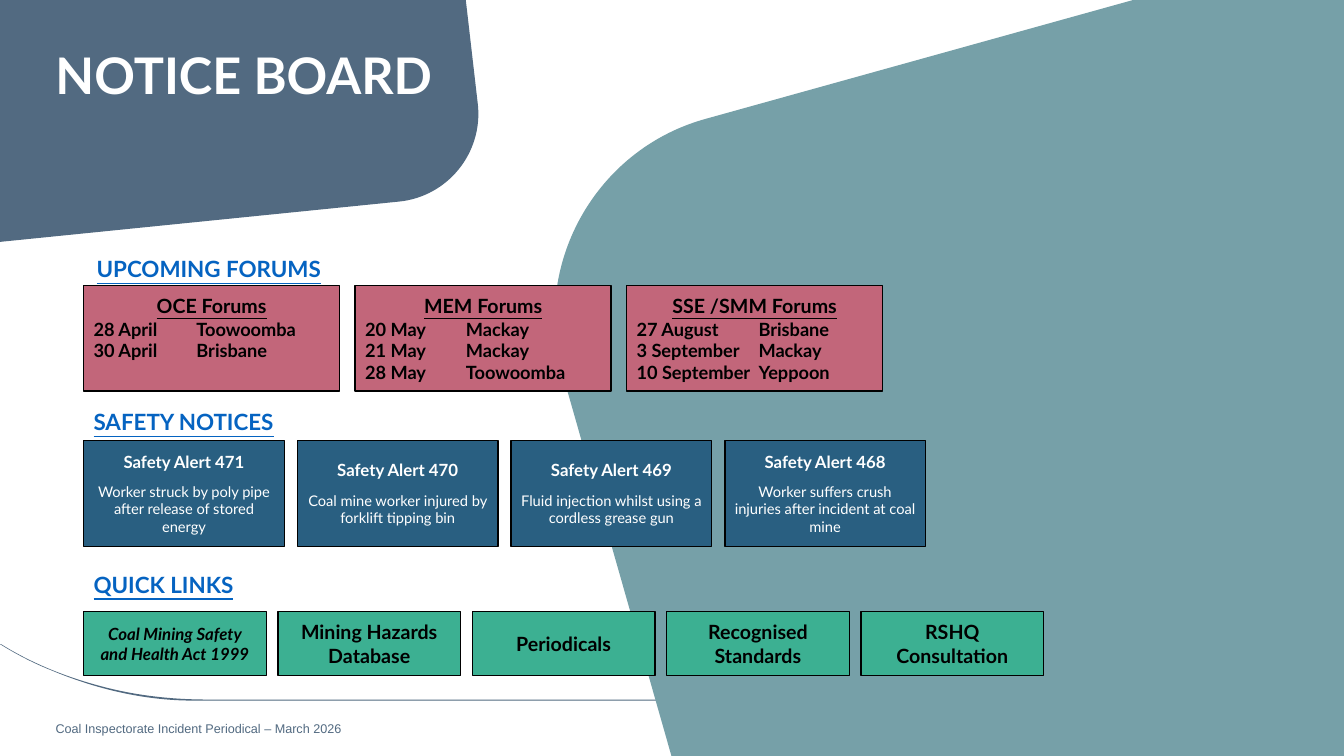
from lxml import etree
from pptx import Presentation
from pptx.dml.color import RGBColor
from pptx.enum.shapes import MSO_SHAPE
from pptx.enum.text import MSO_ANCHOR, PP_ALIGN
from pptx.oxml.ns import qn
from pptx.util import Inches, Pt

WIDE, HIGH = Inches(13.33), Inches(7.5)
LEFT = 6.23

SLATE = RGBColor(0x52, 0x6A, 0x81)
TEAL = RGBColor(0x76, 0xA0, 0xA8)
ROSE = RGBColor(0xC2, 0x66, 0x7A)
NAVY = RGBColor(0x29, 0x5F, 0x81)
GREEN = RGBColor(0x3C, 0xB0, 0x92)
BLUE = RGBColor(0x05, 0x63, 0xC1)
BLACK = RGBColor(0, 0, 0)
WHITE = RGBColor(255, 255, 255)

RECT = MSO_SHAPE.RECTANGLE
BUTTON = MSO_SHAPE.ACTION_BUTTON_CUSTOM
TOP, MIDDLE = MSO_ANCHOR.TOP, MSO_ANCHOR.MIDDLE
START, CENTER = PP_ALIGN.LEFT, PP_ALIGN.CENTER

SWOOSH = [
    (0, 85.2), (0.08, 85.2),
    (2.25, 87.6, 4.73, 89.47, 7.58, 90.8),
    (10.13, 92, 12.75, 92.53, 15.45, 92.53),
    (100, 92.53), (100, 92.67), (14.4, 92.67),
    (10.65, 92.67, 7.05, 91.07, 3.83, 88.67),
    (2.48, 87.73, 1.2, 86.53, 0, 85.2),
]
CORNER = [
    (0, 0), (34.66, 0), (35.56, 13.87),
    (35.93, 20.27, 33.31, 26, 29.71, 26.67), (0, 32),
]
PANEL = [
    (84.32, 0), (100, 0), (100, 100), (49.96, 100), (41.86, 49.47),
    (41.46, 46.99, 41.27, 44.48, 41.27, 42.01),
    (41.27, 30.07, 45.73, 19.05, 52.51, 15.73),
]
FORUMS = [
    ("OCE Forums", 1.02, ["28 April\tToowoomba", "30 April\tBrisbane"]),
    ("MEM Forums", 1, ["20 May\tMackay", "21 May\tMackay", "28 May\tToowoomba"]),
    ("SSE /SMM Forums", 1.21,
     ["27 August\tBrisbane", "3 September\tMackay", "10 September\tYeppoon"]),
]
ALERTS = [
    ("Safety Alert 471", "Worker struck by poly pipe after release of stored energy"),
    ("Safety Alert 470", "Coal mine worker injured by forklift tipping bin"),
    ("Safety Alert 469", "Fluid injection whilst using a cordless grease gun"),
    ("Safety Alert 468", "Worker suffers crush injuries after incident at coal mine"),
]
LINKS = [
    (BUTTON, "Coal Mining Safety and Health Act 1999", 12, True),
    (RECT, "Mining Hazards Database", 14, False),
    (BUTTON, "Periodicals", 14, False),
    (BUTTON, "Recognised Standards", 14, False),
    (BUTTON, "RSHQ Consultation", 14, False),
]


def place(*shares):
    return [round(share * (HIGH if i % 2 else WIDE) / 100)
            for i, share in enumerate(shares)]


def outline(slide, marks, color):
    marks = [place(*mark) for mark in marks]
    ends = [mark[-2:] for mark in marks]
    maker = slide.shapes.build_freeform(*ends[0])
    maker.add_line_segments(ends[1:], close=True)
    shape = maker.convert_to_shape()
    lines = list(shape._element.iter(qn("a:lnTo")))
    for line, mark in zip(lines, marks[1:]):
        if len(mark) == 6:
            curve = etree.Element(qn("a:cubicBezTo"))
            for x, y in zip(mark[::2], mark[1::2]):
                etree.SubElement(curve, qn("a:pt"), x=str(x - shape.left), y=str(y - shape.top))
            line.getparent().replace(line, curve)
    shape.shadow.inherit = False
    shape.fill.solid()
    shape.fill.fore_color.rgb = color
    shape.line.fill.background()


def write(frame, text, size, color, bold=True, align=START, under=None, tab=None, face="Lato"):
    para = frame.paragraphs[0]
    if para.runs:
        para = frame.add_paragraph()
    para.text = text
    para.alignment = align
    if tab:
        tabs = etree.SubElement(para._p.get_or_add_pPr(), qn("a:tabLst"))
        etree.SubElement(tabs, qn("a:tab"), pos=str(Inches(tab)), algn="l")
    font = para.font
    font.name, font.size, font.bold, font.underline = face, Pt(size), bold, under
    font.color.rgb = color
    return para


def label(slide, box, inset=None):
    frame = slide.shapes.add_textbox(*place(*box)).text_frame
    frame.word_wrap = True
    if inset:
        frame.margin_left = frame.margin_right = Inches(inset)
        frame.margin_top = frame.margin_bottom = Inches(inset)
    return frame


def heading(slide, text, box, pitch):
    write(label(slide, box), text, 16, BLUE, under=True).line_spacing = pitch


def card(slide, kind, box, color):
    shape = slide.shapes.add_shape(kind, *place(*box))
    shape.shadow.inherit = False
    shape.fill.solid()
    shape.fill.fore_color.rgb = color
    shape.line.color.rgb = BLACK
    shape.line.width = Pt(1)
    frame = shape.text_frame
    frame.word_wrap = True
    frame.vertical_anchor = MIDDLE
    return frame


def forums(slide):
    heading(slide, "UPCOMING FORUMS", (6.45, 33.07, 18.9, 4.8), 1)
    for col, (name, tab, dates) in enumerate(FORUMS):
        frame = card(slide, RECT, (LEFT + col * 20.2, 37.73, 19.05, 14), ROSE)
        frame.vertical_anchor = TOP
        frame.margin_top = Inches(0.09)
        write(frame, name, 14, BLACK, align=CENTER, under=True)
        for date in dates:
            write(frame, date, 13, BLACK, tab=tab)


def alerts(slide):
    heading(slide, "SAFETY NOTICES", (LEFT, 53.73, 23.18, 4.8), 0.9)
    for col, (name, news) in enumerate(ALERTS):
        frame = card(slide, BUTTON, (LEFT + col * 15.9, 58.27, 14.93, 14), NAVY)
        write(frame, name, 12, WHITE, align=CENTER)
        write(frame, news, 10.5, WHITE, False, CENTER).space_before = Pt(8)


def links(slide):
    heading(slide, "QUICK LINKS", (LEFT, 75.27, 23.18, 4.8), 0.9)
    for col, (kind, name, size, slant) in enumerate(LINKS):
        frame = card(slide, kind, (LEFT + col * 14.46, 80.93, 13.58, 8.4), GREEN)
        write(frame, name, size, BLACK, align=CENTER).font.italic = slant


def main():
    deck = Presentation()
    deck.slide_width, deck.slide_height = WIDE, HIGH
    slide = deck.slides.add_slide(deck.slide_layouts[6])
    for marks, color in ((SWOOSH, SLATE), (CORNER, SLATE), (PANEL, TEAL)):
        outline(slide, marks, color)
    title = label(slide, (3.83, 6.33, 30.9, 11.07), 0.04)
    write(title, "NOTICE BOARD", 36, WHITE).line_spacing = Pt(37.5)
    forums(slide)
    alerts(slide)
    links(slide)
    foot = label(slide, (3.83, 95.07, 32.48, 2.67), 0.04)
    foot.vertical_anchor = MIDDLE
    write(foot, "Coal Inspectorate Incident Periodical – March 2026", 9, SLATE, False, face="Arial")
    deck.save("out.pptx")


if __name__ == "__main__":
    main()
